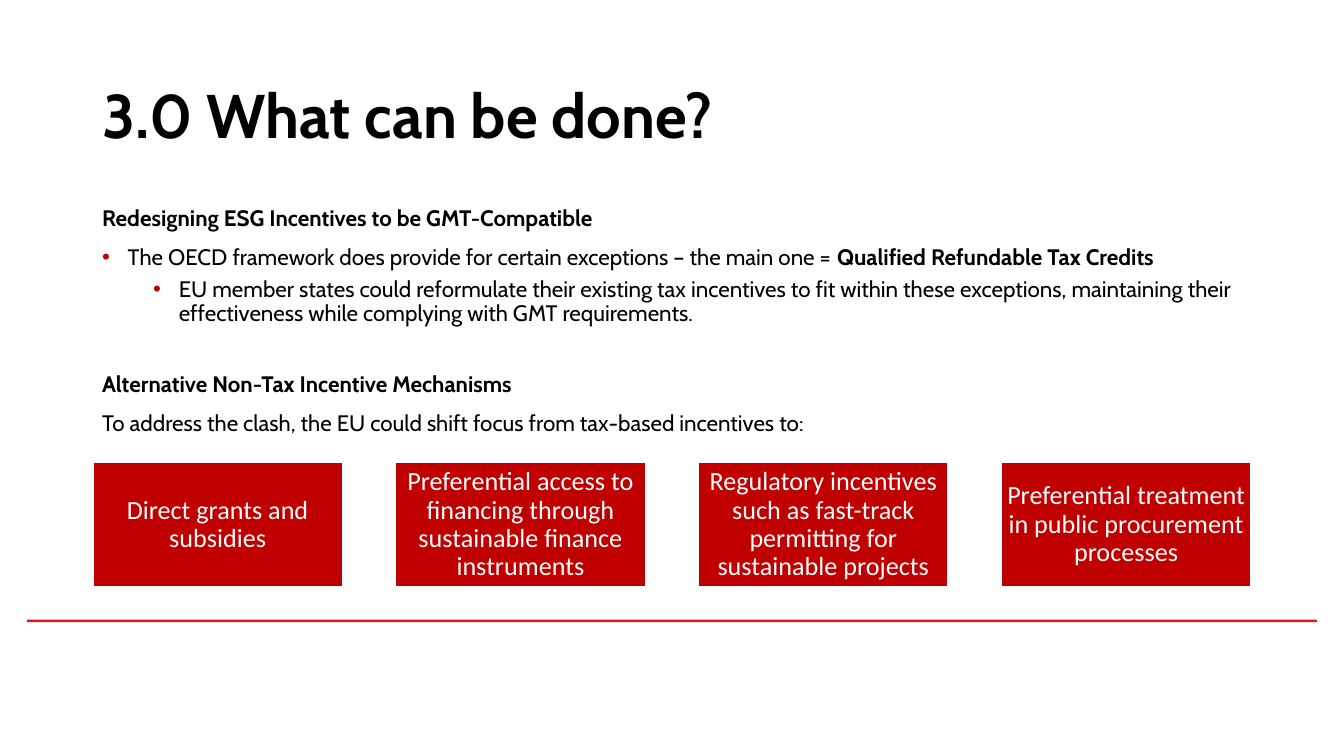
from dataclasses import dataclass

from lxml import etree
from pptx import Presentation
from pptx.dml.color import RGBColor
from pptx.enum import shapes, text
from pptx.oxml import ns
from pptx.util import Inches, Pt

RED, WHITE, BLACK = "C00000", "FFFFFF", "000000"
LEFT, WIDTH = 0.69, 8.62


@dataclass
class Para:
    runs: list[tuple[str, bool]]  # wording, bold
    margin: float = 0.0
    before: float = 0
    bullet: bool = False
    level: int = 0


BODY = [
    Para([("Redesigning ESG Incentives to be GMT-Compatible", True)]),
    Para([("The OECD framework does provide for certain exceptions – the main one = ", False),
          ("Qualified Refundable Tax Credits", True)], 0.19, 8, True),
    Para([("EU member states could reformulate their existing tax incentives to fit "
           "within these exceptions, maintaining their effectiveness while complying "
           "with GMT requirements.", False)], 0.57, 4, True, 1),
    Para([("Alternative Non-Tax Incentive Mechanisms", True)], before=25),
    Para([("To address the clash, the EU could shift focus from tax-based "
           "incentives to:", False)], before=8),
]

CARDS = [
    "Direct grants and subsidies",
    "Preferential access to financing through sustainable finance instruments",
    "Regulatory incentives such as fast-track permitting for sustainable projects",
    "Preferential treatment in public procurement processes",
]


def color(code: str) -> RGBColor:
    return RGBColor.from_string(code)


def style(run, font: str, size: float, code: str, bold: bool = False) -> None:
    run.font.name, run.font.size, run.font.bold = font, Pt(size), bold
    run.font.color.rgb = color(code)


def inset(frame, side: float, top: float) -> None:
    frame.word_wrap = True
    frame.margin_left = frame.margin_right = Inches(side)
    frame.margin_top = frame.margin_bottom = Inches(top)


def add_text(slide, top: float, height: float):
    box = slide.shapes.add_textbox(Inches(LEFT), Inches(top), Inches(WIDTH), Inches(height))
    inset(box.text_frame, 0.07, 0.04)
    return box.text_frame


def add_rect(slide, left: float, top: float, width: float, height: float, fill: str):
    rect = slide.shapes.add_shape(shapes.MSO_SHAPE.RECTANGLE, Inches(left), Inches(top),
                                  Inches(width), Inches(height))
    rect.shadow.inherit = False
    rect.fill.solid()
    rect.fill.fore_color.rgb = color(fill)
    rect.line.fill.background()
    return rect


def add_bullet(para) -> None:
    props = para._p.get_or_add_pPr()
    props.set("indent", str(Inches(-0.19)))
    tint = etree.SubElement(props, ns.qn("a:buClr"))
    etree.SubElement(tint, ns.qn("a:srgbClr"), val=RED)
    etree.SubElement(props, ns.qn("a:buFont"), typeface="Arial")
    etree.SubElement(props, ns.qn("a:buChar"), char="•")


def fill_body(frame, items: list[Para]) -> None:
    for i, item in enumerate(items):
        para = frame.add_paragraph() if i else frame.paragraphs[0]
        para.level = item.level
        para.line_spacing = 0.9
        para.space_before = Pt(item.before)
        para._p.get_or_add_pPr().set("marL", str(Inches(item.margin)))
        if item.bullet:
            add_bullet(para)
        for words, bold in item.runs:
            run = para.add_run()
            run.text = words
            style(run, "Cabin", 12, BLACK, bold)


def add_card(slide, left: float, words: str) -> None:
    card = add_rect(slide, left, 3.44, 1.86, 0.93, RED)
    card.line.color.rgb = color(WHITE)
    card.line.width = Pt(1)
    frame = card.text_frame
    inset(frame, 0.01, 0.01)
    frame.vertical_anchor = text.MSO_ANCHOR.MIDDLE
    frame.text = words
    para = frame.paragraphs[0]
    para.alignment = text.PP_ALIGN.CENTER
    para.line_spacing = 0.9
    style(para.runs[0], "Calibri", 14, WHITE)


def main() -> None:
    deck = Presentation()
    # Widescreen, 16 to 9
    deck.slide_width = Inches(10)
    deck.slide_height = Inches(10 * 9 / 16)
    slide = deck.slides.add_slide(deck.slide_layouts[6])

    # Footer rule
    add_rect(slide, 0.2, 4.61, 9.6, 0.02, "CD1F21")

    # Title
    title = add_text(slide, 0.3, 1.09)
    title.vertical_anchor = text.MSO_ANCHOR.MIDDLE
    title.text = "3.0 What can be done?"
    style(title.paragraphs[0].runs[0], "Cabin", 33, BLACK, True)

    # Body
    fill_body(add_text(slide, 1.5, 1.94), BODY)

    # Row of cards, spread over the text width
    step = (WIDTH - 1.86) / (len(CARDS) - 1)
    for i, words in enumerate(CARDS):
        add_card(slide, LEFT + i * step, words)

    deck.save("out.pptx")


if __name__ == "__main__":
    main()
